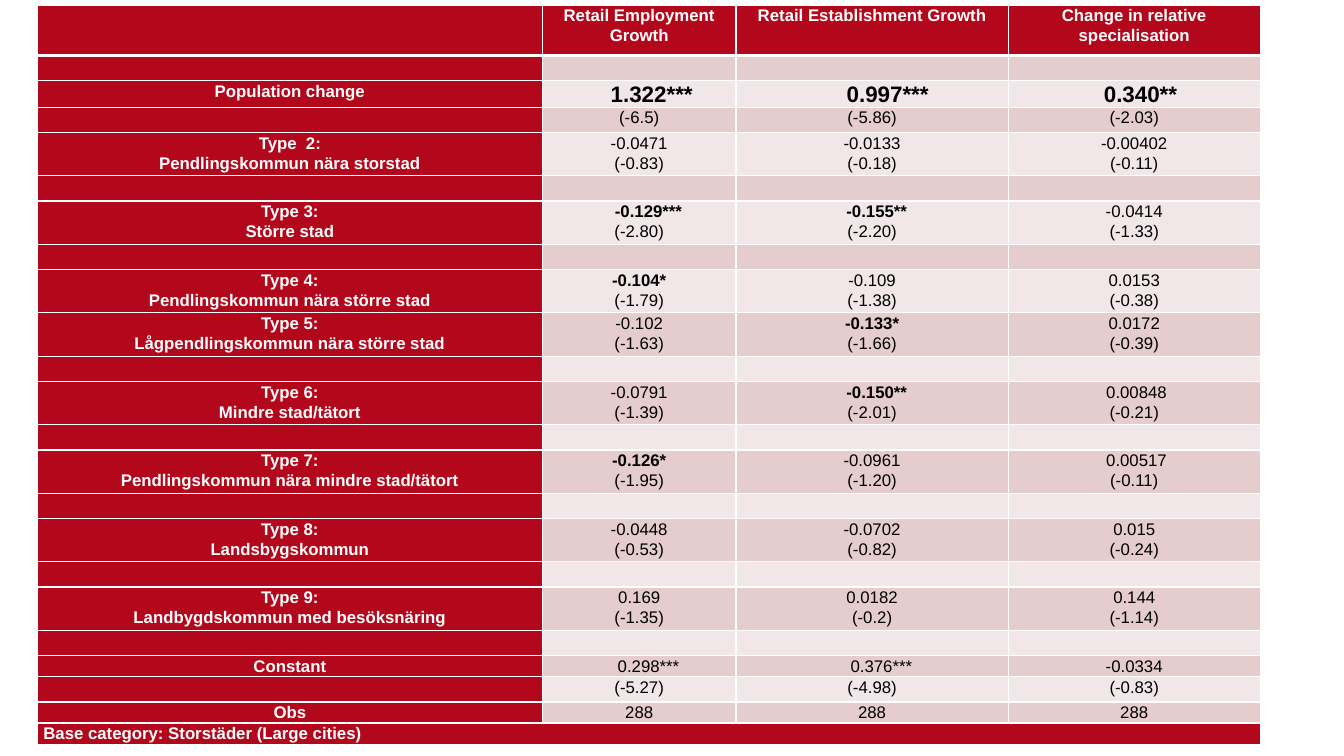
import dataclasses
import typing

import lxml.etree
import pptx
import pptx.dml.color
import pptx.enum.text
import pptx.oxml.ns
import pptx.util

RED = pptx.dml.color.RGBColor(0xB3, 0x07, 0x1B)
DARK_BAND = pptx.dml.color.RGBColor(0xE5, 0xCC, 0xCD)
LIGHT_BAND = pptx.dml.color.RGBColor(0xF2, 0xE7, 0xE8)
WHITE = pptx.dml.color.RGBColor(0xFF, 0xFF, 0xFF)
BLACK = pptx.dml.color.RGBColor(0, 0, 0)
FONT = "Arial"
TEXT_SIZE = 12
COLUMN_WIDTHS = (5.01, 1.92, 2.7, 2.5)


@dataclasses.dataclass(frozen=True)
class Line:
    text: str
    bold: bool = False
    indent: float = 0
    size: float = TEXT_SIZE


Content = tuple[Line, ...]


@dataclasses.dataclass(frozen=True)
class Row:
    height: float
    label: tuple[str, ...] = ()
    values: tuple[Content, ...] = ((), (), ())


def estimate(value: str, statistic: str, bold: bool = False, indent: float = 0) -> Content:
    return Line(value, bold, indent), Line(statistic)


def single(text: str, **style: typing.Any) -> Content:
    return (Line(text, **style),)


GAP = Row(0.25)
HEADINGS = ("Retail Employment Growth", "Retail Establishment Growth", "Change in relative specialisation")
ROWS = (
    Row(0.5, (), tuple(single(heading, bold=True) for heading in HEADINGS)),
    GAP,
    Row(0.21, ("Population change",), (
        single("1.322***", bold=True, indent=17.8, size=16),
        single("0.997***", bold=True, indent=22.2, size=16),
        single("0.340**", bold=True, indent=8.9, size=16))),
    Row(0.25, (), (single("(-6.5)"), single("(-5.86)"), single("(-2.03)"))),
    Row(0.43, ("Type  2:", "Pendlingskommun nära storstad"), (
        estimate("-0.0471", "(-0.83)"),
        estimate("-0.0133", "(-0.18)"),
        estimate("-0.00402", "(-0.11)"))),
    GAP,
    Row(0.43, ("Type 3:", "Större stad"), (
        estimate("-0.129***", "(-2.80)", bold=True, indent=13.3),
        estimate("-0.155**", "(-2.20)", bold=True, indent=6.7),
        estimate("-0.0414", "(-1.33)"))),
    GAP,
    Row(0.43, ("Type 4:", "Pendlingskommun nära större stad"), (
        estimate("-0.104*", "(-1.79)", bold=True),
        estimate("-0.109", "(-1.38)"),
        estimate("0.0153", "(-0.38)"))),
    Row(0.43, ("Type 5:", "Lågpendlingskommun nära större stad"), (
        estimate("-0.102", "(-1.63)"),
        estimate("-0.133*", "(-1.66)", bold=True),
        estimate("0.0172", "(-0.39)"))),
    GAP,
    Row(0.43, ("Type 6:", "Mindre stad/tätort"), (
        estimate("-0.0791", "(-1.39)"),
        estimate("-0.150**", "(-2.01)", bold=True, indent=6.7),
        estimate("0.00848", "(-0.21)", indent=3.3))),
    GAP,
    Row(0.43, ("Type 7:", "Pendlingskommun nära mindre stad/tätort"), (
        estimate("-0.126*", "(-1.95)", bold=True),
        estimate("-0.0961", "(-1.20)"),
        estimate("0.00517", "(-0.11)", indent=3.3))),
    GAP,
    Row(0.43, ("Type 8:", "Landsbygskommun"), (
        estimate("-0.0448", "(-0.53)"),
        estimate("-0.0702", "(-0.82)"),
        estimate("0.015", "(-0.24)"))),
    GAP,
    Row(0.43, ("Type 9:", "Landbygdskommun med besöksnäring"), (
        estimate("0.169", "(-1.35)"),
        estimate("0.0182", "(-0.2)"),
        estimate("0.144", "(-1.14)"))),
    GAP,
    Row(0.21, ("Constant",), (
        single("0.298***", indent=13.3),
        single("0.376***", indent=13.3),
        single("-0.0334"))),
    Row(0.25, (), (single("(-5.27)"), single("(-4.98)"), single("(-0.83)"))),
    Row(0.21, ("Obs",), (single("288"),) * 3),
    Row(0.21, ("Base category: Storstäder (Large cities)",)),
)


def add_element(parent: typing.Any, tag: str, **attributes: str) -> typing.Any:
    return lxml.etree.SubElement(parent, pptx.oxml.ns.qn(tag), **attributes)


def set_borders(cell: typing.Any, top: float, bottom: float) -> None:
    properties = cell._tc.get_or_add_tcPr()
    for side, width in (("L", 1), ("R", 1), ("T", top), ("B", bottom)):
        border = add_element(properties, f"a:ln{side}", w=str(pptx.util.Pt(width)))
        add_element(add_element(border, "a:solidFill"), "a:srgbClr", val=str(WHITE))


def write_line(
    para: typing.Any, text: str, *, size: float, bold: bool, indent: float,
    color: pptx.dml.color.RGBColor, align: pptx.enum.text.PP_ALIGN,
) -> None:
    para.alignment = align
    para.line_spacing = 1.07
    if indent:
        properties = para._p.get_or_add_pPr()
        properties.set("marL", str(pptx.util.Pt(indent)))
        properties.set("indent", "0")
    span = para.add_run()
    span.text = text
    span.font.name = FONT
    span.font.size = pptx.util.Pt(size)
    span.font.bold = bold
    span.font.color.rgb = color


def fill_cell(
    cell: typing.Any, lines: Content, *, fill: pptx.dml.color.RGBColor,
    color: pptx.dml.color.RGBColor, align: pptx.enum.text.PP_ALIGN,
) -> None:
    cell.margin_left = cell.margin_right = pptx.util.Inches(0.06)
    cell.margin_top = cell.margin_bottom = 0
    cell.fill.solid()
    cell.fill.fore_color.rgb = fill
    frame = cell.text_frame
    for index, line in enumerate(lines):
        para = frame.add_paragraph() if index else frame.paragraphs[0]
        write_line(para, line.text, size=line.size, bold=line.bold,
                   indent=line.indent, color=color, align=align)
    if not lines:
        add_element(frame.paragraphs[0]._p, "a:endParaRPr", sz=str(TEXT_SIZE * 100))


def draw_table(page: typing.Any) -> None:
    table = page.shapes.add_table(
        len(ROWS), len(COLUMN_WIDTHS), pptx.util.Inches(0.37), pptx.util.Inches(0.05),
        pptx.util.Inches(sum(COLUMN_WIDTHS)), pptx.util.Inches(sum(row.height for row in ROWS)),
    ).table
    table.first_row = table.horz_banding = False
    for column, width in zip(table.columns, COLUMN_WIDTHS):
        column.width = pptx.util.Inches(width)
    last = len(ROWS) - 1
    for index, row in enumerate(ROWS):
        table.rows[index].height = pptx.util.Inches(row.height)
        label = tuple(Line(text, bold=True) for text in row.label)
        band = DARK_BAND if index % 2 else LIGHT_BAND
        for position, lines in enumerate((label, *row.values)):
            cell = table.cell(index, position)
            is_red = position == 0 or index in (0, last)
            set_borders(cell, top=3 if index == 1 else 1, bottom=3 if index == 0 else 1)
            fill_cell(
                cell, lines, fill=RED if is_red else band, color=WHITE if is_red else BLACK,
                align=pptx.enum.text.PP_ALIGN.LEFT if index == last else pptx.enum.text.PP_ALIGN.CENTER,
            )
    table.cell(last, 0).merge(table.cell(last, len(COLUMN_WIDTHS) - 1))


def main() -> None:
    deck = pptx.Presentation()
    deck.slide_width = pptx.util.Inches(13.33)
    deck.slide_height = pptx.util.Inches(7.5)
    page = deck.slides.add_slide(deck.slide_layouts[6])
    draw_table(page)
    deck.save("out.pptx")


if __name__ == "__main__":
    main()
